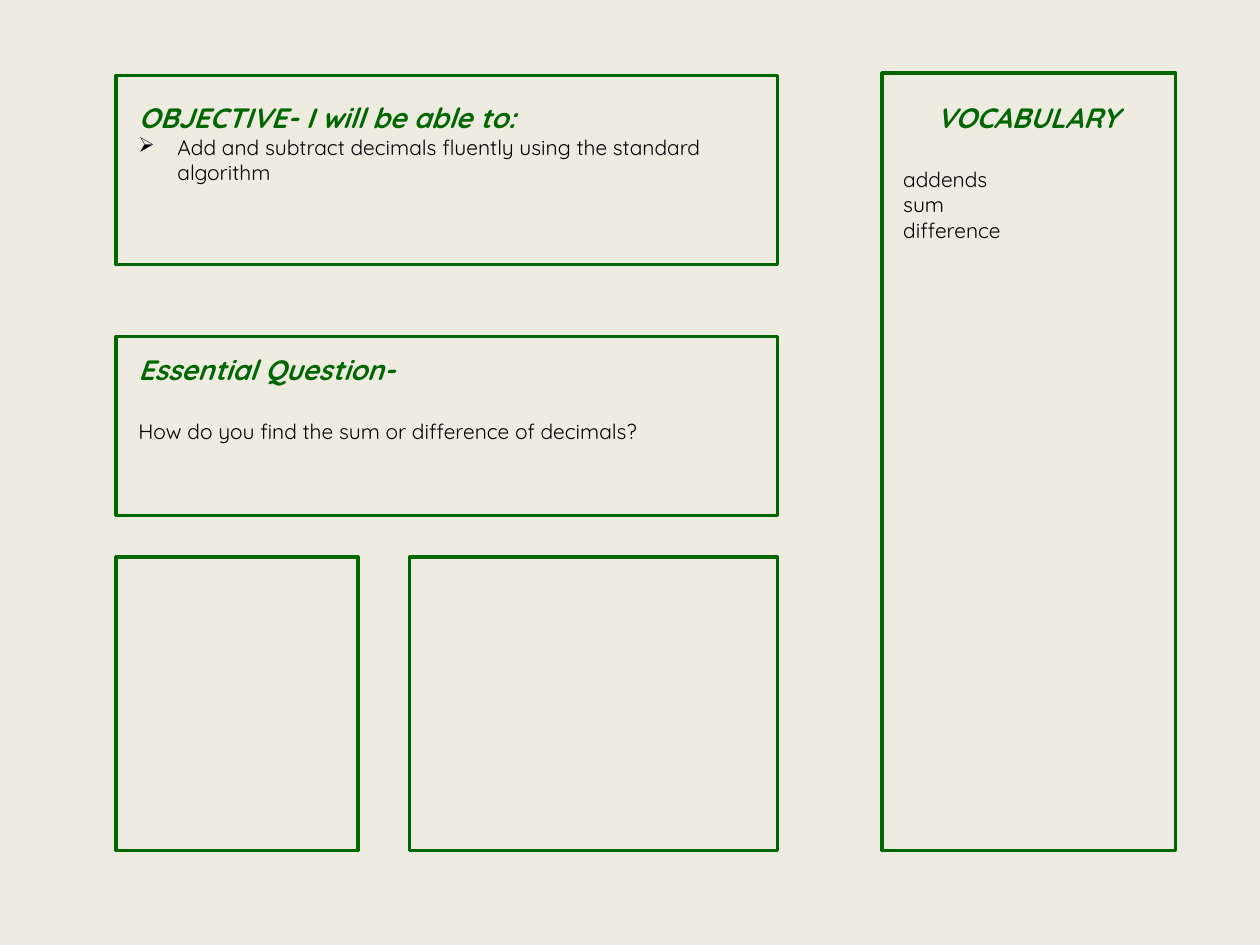
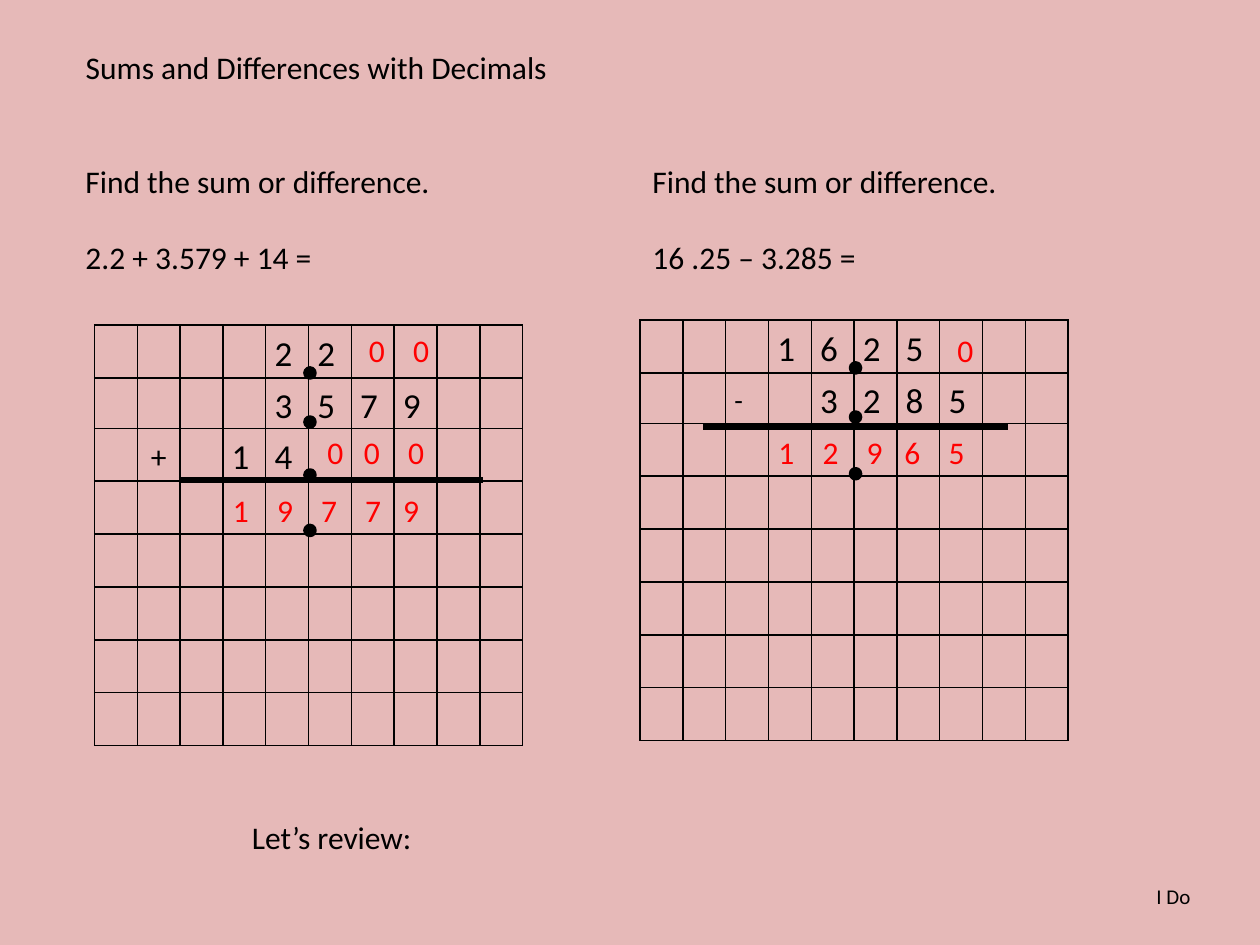
from lxml.etree import SubElement
from pptx import Presentation
from pptx.dml.color import RGBColor
from pptx.enum.shapes import MSO_CONNECTOR, MSO_SHAPE
from pptx.enum.text import MSO_ANCHOR, MSO_AUTO_SIZE, PP_ALIGN
from pptx.oxml import parse_xml
from pptx.oxml.ns import nsdecls, qn
from pptx.util import Inches, Pt

GREEN, BLACK, RED = "006600", "000000", "FF0000"
CREAM, PINK = "EEECE1", "E6B9B8"
HEADING = dict(size=16, color=GREEN, bold=True, italic=True)
TITLE_ONLY = 5

GRID_COLUMNS = 10
GRID_COLUMN_WIDTH = 0.34
GRID_ROWS = [0.42, 0.40] + [0.42] * 6
OPERATORS = {"+": dict(size=18, align=PP_ALIGN.CENTER), "-": dict(size=16)}


def rgb(value):
    return RGBColor.from_string(value)


def write(paragraph, text, font="Calibri", size=18, color=BLACK, bold=False,
          italic=False, align=PP_ALIGN.LEFT, before=0, spacing=None,
          bullet=None, indent=0.31, tabs=()):
    """Put text in a paragraph and format both."""
    paragraph.alignment = align
    paragraph.space_before = Pt(before)
    if spacing:
        paragraph.line_spacing = spacing
    properties = paragraph._p.get_or_add_pPr()
    if bullet:
        properties.set("marL", str(Inches(indent)))
        properties.set("indent", str(-Inches(indent)))
        SubElement(properties, qn("a:buChar")).set("char", bullet)
    else:
        SubElement(properties, qn("a:buNone"))
    if tabs:
        tab_list = SubElement(properties, qn("a:tabLst"))
        for position in tabs:
            tab = SubElement(tab_list, qn("a:tab"))
            tab.set("pos", str(Inches(position)))
            tab.set("algn", "l")
    run = paragraph.add_run()
    run.text = text
    run.font.name = font
    run.font.size = Pt(size)
    run.font.bold = bold
    run.font.italic = italic
    run.font.color.rgb = rgb(color)


class Deck:
    def __init__(self):
        self.presentation = Presentation()
        self.presentation.slide_width = Inches(10)
        self.presentation.slide_height = Inches(7.5)
        self.slide = None
        self.font = None

    def new_slide(self, background, font):
        layout = self.presentation.slide_layouts[TITLE_ONLY]
        self.slide = self.presentation.slides.add_slide(layout)
        self.font = font
        fill = self.slide.background.fill
        fill.solid()
        fill.fore_color.rgb = rgb(background)

    def fill_frame(self, shape, lines):
        frame = shape.text_frame
        frame.word_wrap = True
        frame.auto_size = MSO_AUTO_SIZE.NONE
        frame.vertical_anchor = MSO_ANCHOR.TOP
        for index, (text, style) in enumerate(lines):
            paragraph = frame.add_paragraph() if index else frame.paragraphs[0]
            write(paragraph, text, font=self.font, **style)

    def title(self, box, text, **style):
        shape = self.slide.shapes.title
        shape.left, shape.top, shape.width, shape.height = map(Inches, box)
        self.fill_frame(shape, [(text, style)])

    def text(self, box, *lines):
        shape = self.slide.shapes.add_textbox(*map(Inches, box))
        self.fill_frame(shape, lines)

    def shape(self, kind, box, line, fill=None):
        shape = self.slide.shapes.add_shape(kind, *map(Inches, box))
        shape.shadow.inherit = False
        shape.line.color.rgb = rgb(line)
        shape.line.width = Pt(2)
        if fill:
            shape.fill.solid()
            shape.fill.fore_color.rgb = rgb(fill)
        else:
            shape.fill.background()

    def rule(self, left, right, top):
        line = self.slide.shapes.add_connector(
            MSO_CONNECTOR.STRAIGHT, *map(Inches, (left, top, right, top)))
        line.line.color.rgb = rgb(BLACK)
        line.line.width = Pt(3)
        SubElement(line._element.spPr, qn("a:effectLst"))

    def digit_grid(self, left, top, rows):
        """Draw squared paper; each row is (first column, characters)."""
        table = self.slide.shapes.add_table(
            len(GRID_ROWS), GRID_COLUMNS, Inches(left), Inches(top),
            Inches(GRID_COLUMNS * GRID_COLUMN_WIDTH), Inches(sum(GRID_ROWS))).table
        table.first_row = table.horz_banding = False
        for column in table.columns:
            column.width = Inches(GRID_COLUMN_WIDTH)
        for row, height in zip(table.rows, GRID_ROWS):
            row.height = Inches(height)
        for cell in table.iter_cells():
            cell.margin_left = cell.margin_right = Inches(0.07)
            cell.margin_top = cell.margin_bottom = 0
            cell.vertical_anchor = MSO_ANCHOR.MIDDLE
            cell.fill.background()
            for index, side in enumerate("LRTB"):
                cell._tc.get_or_add_tcPr().insert(index, parse_xml(
                    f'<a:ln{side} {nsdecls("a")} w="{Pt(1)}"><a:solidFill>'
                    f'<a:srgbClr val="{BLACK}"/></a:solidFill></a:ln{side}>'))
        for row, (first, characters) in enumerate(rows):
            for column, character in enumerate(characters, first):
                if character != " ":
                    style = OPERATORS.get(character, dict(size=20))
                    paragraph = table.cell(row, column).text_frame.paragraphs[0]
                    write(paragraph, character, font=self.font, spacing=1.15, **style)

    def decimal_points(self, left, tops):
        for top in tops:
            self.shape(MSO_SHAPE.OVAL, (left, top, 0.08, 0.08), BLACK, fill=BLACK)

    def red_digits(self, left, top, width, digits, tabs=()):
        self.text((left, top, width, 0.4),
                  ("\t".join(digits), dict(color=RED, tabs=tabs)))


def build_objective_slide(deck):
    deck.new_slide(CREAM, "Quicksand")
    body = dict(size=12)
    after_gap = dict(size=12, before=18.5)

    # Frames
    for box in [(0.92, 0.6, 5.25, 1.5), (7, 0.58, 2.33, 6.17),
                (0.92, 2.67, 5.25, 1.42), (0.92, 4.42, 1.92, 2.33),
                (3.25, 4.42, 2.92, 2.33)]:
        deck.shape(MSO_SHAPE.RECTANGLE, box, GREEN)

    # Objective
    deck.title((1, 0.75, 5.08, 0.38), "OBJECTIVE- I will be able to:", **HEADING)
    deck.text((1, 1.02, 5.08, 0.77),
              ("Add and subtract decimals fluently using the standard algorithm",
               dict(size=12, bullet="➢")))

    # Vocabulary
    deck.text((7.07, 0.75, 2.17, 1.45),
              ("VOCABULARY", dict(HEADING, align=PP_ALIGN.CENTER)),
              ("addends", after_gap), ("sum", body), ("difference", body))

    # Essential question
    deck.text((1, 2.75, 5.08, 1.04),
              ("Essential Question-", HEADING),
              ("How do you find the sum or difference of decimals?", after_gap))


def build_practice_slide(deck):
    deck.new_slide(PINK, "Calibri")
    deck.title((0.58, 0.33, 4.33, 0.42), "Sums and Differences with Decimals")

    # Problems
    for left, problem in [(0.58, "2.2 + 3.579 + 14 ="), (5.08, "16 .25 – 3.285 =")]:
        deck.text((left, 1.24, 4.33, 1.01),
                  ("Find the sum or difference.", {}),
                  (problem, dict(before=21.5)))

    # Addition
    deck.digit_grid(0.75, 2.58, [(4, "22"), (4, "3579"), (1, "+ 14")])
    deck.decimal_points(2.42, [2.92, 3.31, 3.73, 4.17])
    deck.rule(1.42, 3.83, 3.81)
    deck.red_digits(2.83, 2.58, 0.77, "00", [0.35])
    deck.red_digits(2.5, 3.39, 1, "000", [0.29, 0.64])
    deck.red_digits(1.75, 3.85, 1.75, "19779", [0.35, 0.7, 1.05, 1.35])

    # Subtraction
    deck.digit_grid(5.08, 2.54, [(3, "1625"), (2, "- 3285")])
    deck.decimal_points(6.75, [2.88, 3.27, 3.72])
    deck.rule(5.58, 8, 3.39)
    deck.red_digits(7.5, 2.58, 0.33, "0")
    deck.red_digits(6.08, 3.39, 1.75, "12965", [0.35, 0.7, 1, 1.35])

    # Closing labels
    deck.text((1.9, 6.44, 1.71, 0.4), ("Let’s review:", {}))
    deck.text((9.08, 6.96, 0.75, 0.3), ("I Do", dict(size=12)))


def main():
    deck = Deck()
    build_objective_slide(deck)
    build_practice_slide(deck)
    deck.presentation.save("out.pptx")


if __name__ == "__main__":
    main()
